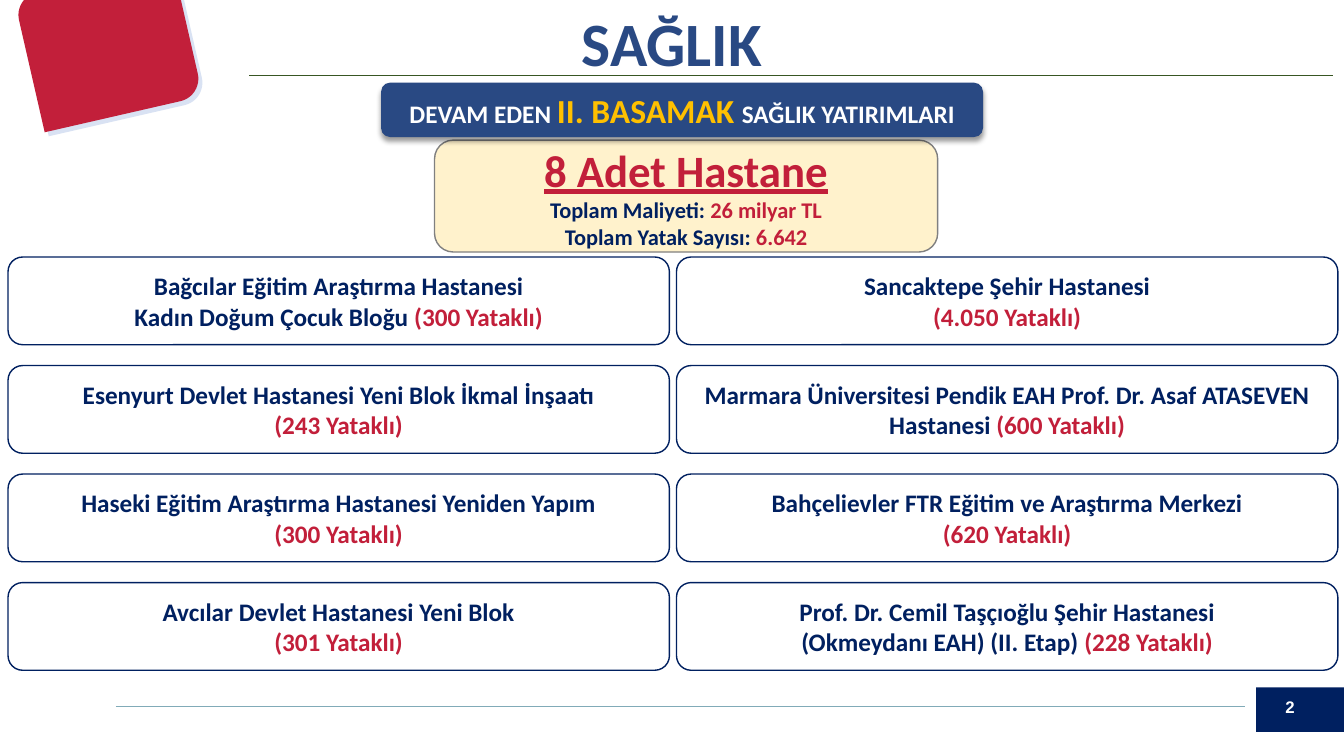
from lxml import etree
from pptx import Presentation
from pptx.dml.color import RGBColor
from pptx.enum.shapes import MSO_CONNECTOR, MSO_SHAPE
from pptx.enum.text import MSO_ANCHOR, PP_ALIGN
from pptx.oxml import parse_xml
from pptx.oxml.ns import nsdecls, qn
from pptx.util import Inches, Pt

STRAIGHT = MSO_CONNECTOR.STRAIGHT
RECT = MSO_SHAPE.RECTANGLE
ROUNDED = MSO_SHAPE.ROUNDED_RECTANGLE
DIAGONAL = MSO_SHAPE.ROUND_2_DIAG_RECTANGLE
MIDDLE = MSO_ANCHOR.MIDDLE
CENTER = PP_ALIGN.CENTER

NAVY, BLUE, RED, WHITE, GOLD = "002060", "294983", "C21F3A", "FFFFFF", "FFC000"

HOSPITALS = [
    [
        [[("Bağcılar Eğitim Araştırma Hastanesi", NAVY)],
         [("Kadın Doğum Çocuk Bloğu ", NAVY), ("(300 Yataklı)", RED)]],
        [[("Esenyurt Devlet Hastanesi Yeni Blok İkmal İnşaatı", NAVY)],
         [("(243 Yataklı)", RED)]],
        [[("Haseki Eğitim Araştırma Hastanesi Yeniden Yapım", NAVY)],
         [("(300 Yataklı)", RED)]],
        [[("Avcılar Devlet Hastanesi Yeni Blok", NAVY)],
         [("(301 Yataklı)", RED)]],
    ],
    [
        [[("Sancaktepe Şehir Hastanesi", NAVY)],
         [("(4.050 Yataklı)", RED)]],
        [[("Marmara Üniversitesi Pendik EAH Prof. Dr. Asaf ATASEVEN Hastanesi ", NAVY),
          ("(600 Yataklı)", RED)]],
        [[("Bahçelievler FTR Eğitim ve Araştırma Merkezi", NAVY)],
         [("(620 Yataklı)", RED)]],
        [[("Prof. Dr. Cemil Taşçıoğlu Şehir Hastanesi", NAVY)],
         [("(Okmeydanı EAH) (II. Etap) ", NAVY), ("(228 Yataklı)", RED)]],
    ],
]


def rgb(value):
    """Turn a hex string into a colour."""
    return RGBColor.from_string(value)


def format_font(font, size, color, name="Calibri"):
    """Apply the bold text style of the slide."""
    font.name, font.size, font.bold = name, Pt(size), True
    font.color.rgb = rgb(color)


def add_block(slide, kind, left, top, width, height, fill, outline=None):
    """Add a filled shape, with a one-point outline if a colour is given."""
    block = slide.shapes.add_shape(
        kind, Inches(left), Inches(top), Inches(width), Inches(height))
    block.shadow.inherit = False
    block.fill.solid()
    block.fill.fore_color.rgb = rgb(fill)
    if outline:
        block.line.color.rgb = rgb(outline)
        block.line.width = Pt(1)
    else:
        block.line.fill.background()
    return block


def write_lines(block, lines):
    """Write centred lines, each a list of (text, colour, size) parts."""
    frame = block.text_frame
    frame.word_wrap = True
    frame.vertical_anchor = MIDDLE
    for index, parts in enumerate(lines):
        paragraph = frame.add_paragraph() if index else frame.paragraphs[0]
        paragraph.alignment = CENTER
        for text, color, size in parts:
            run = paragraph.add_run()
            run.text = text
            format_font(run.font, size, color)


def add_rule(slide, left, right, y, color, width):
    """Add a thin horizontal line."""
    rule = slide.shapes.add_connector(
        STRAIGHT, Inches(left), Inches(y), Inches(right), Inches(y))
    rule.line.color.rgb = rgb(color)
    rule.line.width = Pt(width)
    etree.SubElement(rule._element.spPr, qn("a:effectLst"))


def add_footer(slide, left, top, width, height):
    """Add the footer line and the page number on its navy tab."""
    add_rule(slide, left, left + width - 0.98, top + 0.19, "81ABB8", 0.75)
    add_block(slide, RECT, left + width - 0.87, top, 0.87, height, NAVY)
    number = slide.shapes.add_textbox(
        Inches(left + width - 0.68), Inches(top + 0.04), Inches(0.6), Inches(0.3))
    number.text_frame.word_wrap = True
    number.text_frame.text = "2"
    format_font(number.text_frame.paragraphs[0].runs[0].font, 12, WHITE, "Arial")


def add_corner_ornament(slide, left, top, width, height):
    """Add the tilted red tile over its pale backing."""
    for offset, color in ((0.04, "4472C4"), (0, RED)):
        tile = add_block(slide, DIAGONAL, left + offset, top + offset,
                         width, height, color)
        tile.rotation = 347.1
        if color != RED:
            fill_color = tile._element.spPr.find(qn("a:solidFill"))[0]
            etree.SubElement(fill_color, qn("a:alpha"), val="20000")


def add_title(slide, left, top, width, height):
    """Place and format the title placeholder."""
    title = slide.shapes.title
    title.left, title.top = Inches(left), Inches(top)
    title.width, title.height = Inches(width), Inches(height)
    title.text_frame.text = "SAĞLIK"
    title.text_frame.vertical_anchor = MIDDLE
    heading = title.text_frame.paragraphs[0]
    heading.alignment = CENTER
    format_font(heading.runs[0].font, 44, BLUE)


def add_summary(slide, left, top, width, height):
    """Add the cream box with the totals."""
    summary = add_block(slide, ROUNDED, left, top, width, height, "FFF2CC", "808080")
    write_lines(summary, [
        [("8 Adet Hastane", RED, 32)],
        [("Toplam Maliyeti: ", NAVY, 16), ("26 milyar TL", RED, 16)],
        [("Toplam Yatak Sayısı: ", NAVY, 16), ("6.642", RED, 16)],
    ])
    summary.text_frame.paragraphs[0].runs[0].font.underline = True


def add_banner(slide, left, top, width, height):
    """Add the blue banner with its soft shadow."""
    banner = add_block(slide, ROUNDED, left, top, width, height, BLUE)
    banner._element.spPr.find(qn("a:effectLst")).append(parse_xml(
        f'<a:outerShdw {nsdecls("a")} blurRad="{Pt(4)}" dist="{Pt(3)}" dir="5400000" '
        'rotWithShape="0"><a:srgbClr val="000000"><a:alpha val="40000"/>'
        '</a:srgbClr></a:outerShdw>'))
    write_lines(banner, [[("DEVAM EDEN ", WHITE, 18), ("II. BASAMAK ", GOLD, 24),
                          ("SAĞLIK YATIRIMLARI", WHITE, 18)]])


def add_hospital_grid(slide, left, top, width, height):
    """Spread the hospital cards evenly over the box."""
    card_width, card_height = 6.56, 0.87
    column_step = (width - card_width) / (len(HOSPITALS) - 1)
    for column, hospitals in enumerate(HOSPITALS):
        row_step = (height - card_height) / (len(hospitals) - 1)
        for row, lines in enumerate(hospitals):
            card = add_block(slide, ROUNDED, left + column * column_step,
                             top + row * row_step, card_width, card_height, WHITE, NAVY)
            write_lines(card, [[(text, color, 18) for text, color in parts]
                               for parts in lines])


def main():
    """Build and save the slide."""
    deck = Presentation()
    deck.slide_width, deck.slide_height = Inches(13.33), Inches(7.5)
    slide = deck.slides.add_slide(deck.slide_layouts[5])
    add_footer(slide, 1.15, 6.82, 12.18, 0.44)
    add_rule(slide, 2.47, 13.22, 0.75, "385623", 1)
    add_corner_ornament(slide, 0.27, -0.22, 1.61, 1.37)
    add_title(slide, 1.3, 0, 10.73, 0.84)
    add_summary(slide, 4.31, 1.39, 4.99, 1.11)
    add_banner(slide, 3.78, 0.82, 5.97, 0.54)
    add_hospital_grid(slide, 0.08, 2.55, 13.19, 4.1)
    deck.save("out.pptx")


if __name__ == "__main__":
    main()
